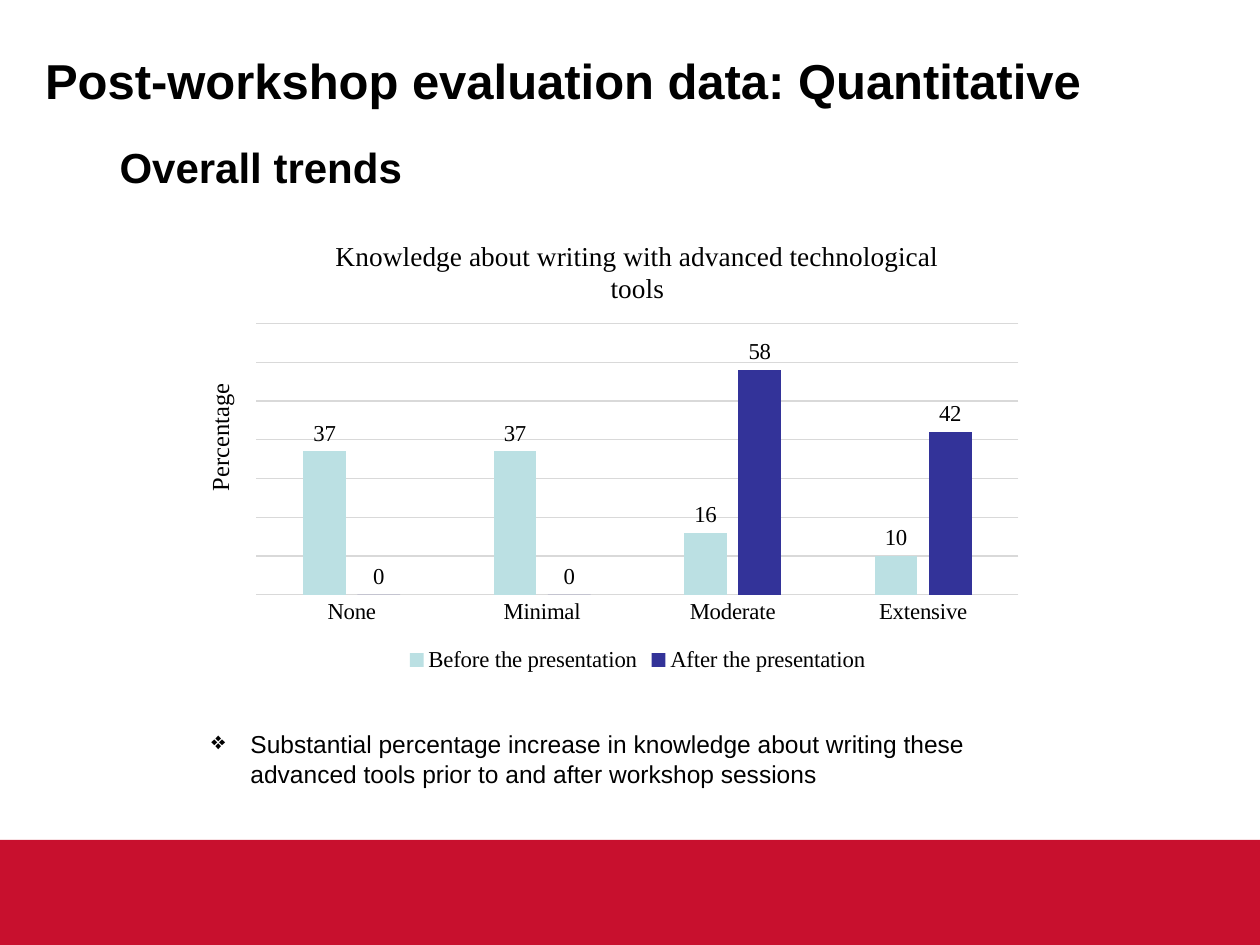
from lxml import etree
from pptx import Presentation
from pptx.chart.data import CategoryChartData
from pptx.dml.color import RGBColor
from pptx.enum.chart import XL_CHART_TYPE as ChartType, XL_LABEL_POSITION as LabelPos
from pptx.enum.chart import XL_LEGEND_POSITION as LegendPos, XL_TICK_MARK as Tick
from pptx.enum.shapes import MSO_SHAPE as Shape
from pptx.oxml import parse_xml
from pptx.oxml.ns import nsdecls, qn
from pptx.util import Cm, Pt

THEME = {
    "black": RGBColor(0, 0, 0),
    "grid": RGBColor(0xD9, 0xD9, 0xD9),
    "red": RGBColor(0xC8, 0x10, 0x2E),
    "before": RGBColor(0xBB, 0xE0, 0xE3),
    "after": RGBColor(0x33, 0x33, 0x99),
    "sans": "Arial",
    "serif": "Times New Roman",
    "heading": Pt(28),
    "subheading": Pt(24),
    "body": Pt(14),
    "chart": Pt(13),
    "chart_title": Pt(15.6),
}


def style_font(font, size, face, bold=False):
    formats = {"size": THEME[size], "name": THEME[face], "bold": bold}
    for key, value in formats.items():
        setattr(font, key, value)
    font.color.rgb = THEME["black"]


def add_text(box, text, size, face="sans", bold=False, bullet=None):
    holder = slide.shapes.add_textbox(*(Cm(length) for length in box))
    holder.text_frame.word_wrap = True
    paragraph = holder.text_frame.paragraphs[0]
    paragraph.text = text
    if bullet:
        props = paragraph._p.get_or_add_pPr()
        props.set("marL", str(Cm(0.79)))
        props.set("indent", str(-Cm(0.79)))
        etree.SubElement(props, qn("a:buChar")).set("char", bullet)
    style_font(paragraph.runs[0].font, size, face, bold)
    return holder


prs = Presentation()
prs.slide_width, prs.slide_height = Cm(25.4), Cm(19.05)
slide = prs.slides.add_slide(prs.slide_layouts[6])

# Footer band
footer = slide.shapes.add_shape(Shape.RECTANGLE, 0, Cm(16.93), Cm(25.4), Cm(2.12))
footer.shadow.inherit = False
footer.fill.solid()
footer.fill.fore_color.rgb = THEME["red"]
footer.line.fill.background()

# Headings
add_text((2.16, 2.72, 18.72, 4.37), "Overall trends", "subheading", bold=True)
add_text((0.66, 0.89, 24.54, 1.45), "Post-workshop evaluation data: Quantitative",
         "heading", bold=True)

# Knowledge chart
ratings = CategoryChartData()
ratings.categories = ["None", "Minimal", "Moderate", "Extensive"]
ratings.add_series("Before the presentation", (37, 37, 16, 10))
ratings.add_series("After the presentation", (0, 0, 58, 42))
chart = slide.shapes.add_chart(ChartType.COLUMN_CLUSTERED, Cm(4.85), Cm(4.39),
                               Cm(16), Cm(9.27), ratings).chart
style_font(chart.font, "chart", "serif")

chart.has_title = True
chart_title = chart.chart_title
chart_title.include_in_layout = False
chart_title.text_frame.text = "Knowledge about writing with advanced technological tools"
style_font(chart_title.text_frame.paragraphs[0].runs[0].font, "chart_title", "serif")

chart.has_legend = True
chart.legend.position = LegendPos.BOTTOM
chart.legend.include_in_layout = False
style_font(chart.legend.font, "chart", "serif")

# Axes
answers, percent = chart.category_axis, chart.value_axis
answers.major_tick_mark = Tick.NONE
style_font(answers.tick_labels.font, "chart", "serif")
for key, value in {"minimum_scale": 0, "maximum_scale": 70, "major_unit": 10,
                   "has_major_gridlines": True, "visible": False}.items():
    setattr(percent, key, value)
for line in (answers.format.line, percent.major_gridlines.format.line):
    line.color.rgb = THEME["grid"]
    line.width = Pt(0.75)

# Columns and value labels
plot = chart.plots[0]
for key, value in {"gap_width": 219, "overlap": -27, "vary_by_categories": False}.items():
    setattr(plot, key, value)
for series, color in zip(plot.series, ("before", "after")):
    series.format.fill.solid()
    series.format.fill.fore_color.rgb = THEME[color]
    labels = series.data_labels
    labels.show_value = True
    labels.position = LabelPos.OUTSIDE_END
    style_font(labels.font, "chart", "serif")

# Fixed place of the plot area, as shares of the chart
layout = parse_xml(f"<c:layout {nsdecls('c')}><c:manualLayout/></c:layout>")
for tag, value in {"layoutTarget": "inner", "xMode": "edge", "yMode": "edge",
                   "x": 0.02, "y": 0.23, "w": 0.96, "h": 0.59}.items():
    etree.SubElement(layout[0], qn(f"c:{tag}")).set("val", str(value))
plot_area = chart._chartSpace.chart.plotArea
for automatic in plot_area.findall(qn("c:layout")):
    plot_area.remove(automatic)
plot_area.insert(0, layout)

# Finding and axis caption
add_text((4.01, 14.58, 16.87, 1.45),
         "Substantial percentage increase in knowledge about writing these "
         "advanced tools prior to and after workshop sessions", "body", bullet="❖")
caption = add_text((2.74, 8.03, 3.38, 0.86), "Percentage", "body", face="serif")
caption.rotation = 270

prs.save("out.pptx")
